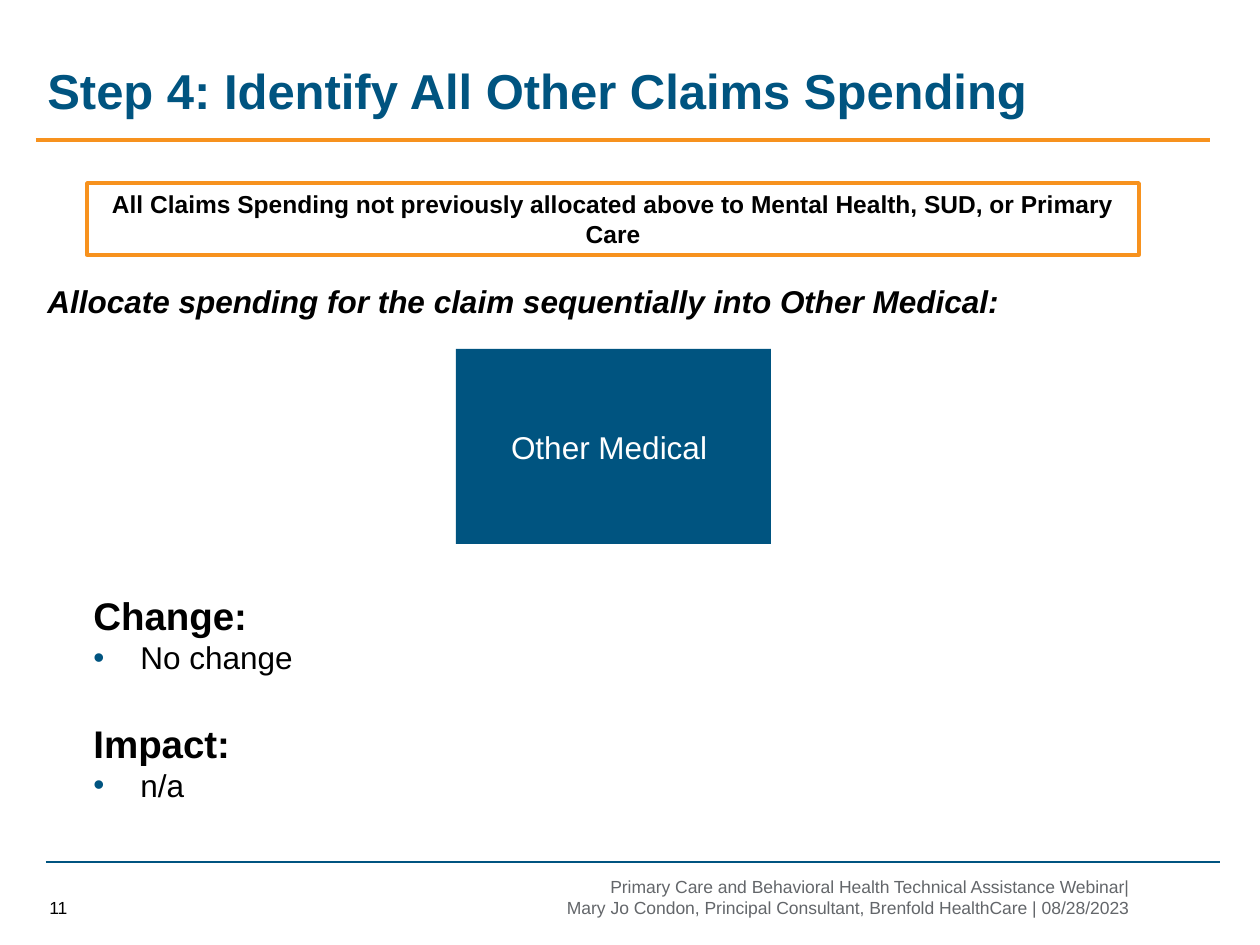
from dataclasses import dataclass, field
from typing import Optional

from lxml.etree import SubElement
from pptx import Presentation
from pptx.dml.color import RGBColor
from pptx.enum.shapes import MSO_CONNECTOR, MSO_SHAPE
from pptx.enum.text import MSO_ANCHOR, PP_ALIGN
from pptx.oxml.ns import qn
from pptx.util import Emu, Pt

PX_PER_INCH = 126
BLUE, ORANGE, GRAY, BLACK, WHITE = "005480", "F7921E", "63666A", "000000", "FFFFFF"


def px(n: int) -> Emu:
    return Emu(round(n * 914400 / PX_PER_INCH))


def rgb(color: str) -> RGBColor:
    return RGBColor.from_string(color)


@dataclass
class Para:
    text: str
    size: int
    color: str = BLACK
    bold: bool = False
    italic: bool = False
    bullet: bool = False
    right: int = 0
    fmt: dict = field(default_factory=dict)


@dataclass
class Box:
    at: tuple[int, int, int, int]
    paras: list[Para]
    anchor: MSO_ANCHOR = MSO_ANCHOR.TOP
    fill: Optional[str] = None
    line: Optional[str] = None


@dataclass
class Rule:
    x: int
    y: int
    color: str
    weight: float
    width: int = 1174


def set_attrs(obj, values: dict) -> None:
    for name, value in values.items():
        setattr(obj, name, value)


def add_bullet(p) -> None:
    pPr = p._p.get_or_add_pPr()
    pPr.set("marL", str(px(47)))
    pPr.set("indent", str(-px(47)))
    clr = SubElement(pPr, qn("a:buClr"))
    SubElement(clr, qn("a:srgbClr")).set("val", BLUE)
    SubElement(pPr, qn("a:buFont")).set("typeface", "Arial")
    SubElement(pPr, qn("a:buChar")).set("char", "•")


def write_para(p, para: Para) -> None:
    set_attrs(p, para.fmt)
    if para.right:
        p._p.get_or_add_pPr().set("marR", str(px(para.right)))
    if para.bullet:
        add_bullet(p)
    r = p.add_run()
    r.text = para.text
    set_attrs(r.font, {"name": "Arial", "size": Pt(para.size),
                       "bold": para.bold, "italic": para.italic})
    r.font.color.rgb = rgb(para.color)


def draw_box(s, box: Box) -> None:
    at = [px(n) for n in box.at]
    if box.fill:
        sp = s.shapes.add_shape(MSO_SHAPE.RECTANGLE, *at)
        sp.shadow.inherit = False
        sp.fill.solid()
        sp.fill.fore_color.rgb = rgb(box.fill)
        if box.line:
            sp.line.color.rgb = rgb(box.line)
            sp.line.width = Pt(2)
        else:
            sp.line.fill.background()
    else:
        sp = s.shapes.add_textbox(*at)
    tf = sp.text_frame
    set_attrs(tf, {"word_wrap": True, "vertical_anchor": box.anchor})
    for i, para in enumerate(box.paras):
        write_para(tf.add_paragraph() if i else tf.paragraphs[0], para)


def draw_rule(s, rule: Rule) -> None:
    y = px(rule.y)
    cxn = s.shapes.add_connector(MSO_CONNECTOR.STRAIGHT, px(rule.x), y, px(rule.x + rule.width), y)
    cxn.line.color.rgb = rgb(rule.color)
    cxn.line.width = Pt(rule.weight)
    SubElement(cxn._element.spPr, qn("a:effectLst"))


CENTER = {"alignment": PP_ALIGN.CENTER}
RIGHT = {"alignment": PP_ALIGN.RIGHT}

RULES = [Rule(46, 862, BLUE, 0.75), Rule(36, 140, ORANGE, 2.25)]

BOXES = [
    Box((35, 54, 1106, 72),
        [Para("Step 4: Identify All Other Claims Spending", 28, BLUE, bold=True)],
        MSO_ANCHOR.BOTTOM),
    Box((37, 883, 73, 50), [Para("11", 10)], MSO_ANCHOR.MIDDLE),
    Box((81, 586, 725, 229), [
        Para("Change:", 22, bold=True),
        Para("No change", 18, bullet=True),
        Para("Impact:", 22, bold=True, fmt={"space_before": Pt(25)}),
        Para("n/a", 18, bullet=True),
    ]),
    Box((87, 183, 1052, 72),
        [Para("All Claims Spending not previously allocated above to Mental Health, SUD, "
              "or Primary Care", 14, bold=True, fmt=CENTER)],
        fill=WHITE, line=ORANGE),
    Box((35, 273, 1158, 50),
        [Para("Allocate spending for the claim sequentially into Other Medical:", 18,
              bold=True, italic=True, fmt={"line_spacing": 1.07})]),
    Box((456, 349, 315, 195), [Para("Other Medical ", 18, WHITE, fmt=CENTER)],
        MSO_ANCHOR.MIDDLE, fill=BLUE),
    Box((537, 872, 614, 50), [
        Para("Primary Care and Behavioral Health Technical Assistance Webinar|", 10, GRAY,
             right=10, fmt=RIGHT),
        Para("Mary Jo Condon, Principal Consultant, Brenfold HealthCare | 08/28/2023", 10, GRAY,
             fmt=RIGHT),
    ], MSO_ANCHOR.MIDDLE),
]


def main() -> None:
    prs = Presentation()
    set_attrs(prs, {"slide_width": px(1260), "slide_height": px(945)})
    s = prs.slides.add_slide(prs.slide_layouts[6])
    for rule in RULES:
        draw_rule(s, rule)
    for box in BOXES:
        draw_box(s, box)
    prs.save("out.pptx")


if __name__ == "__main__":
    main()
